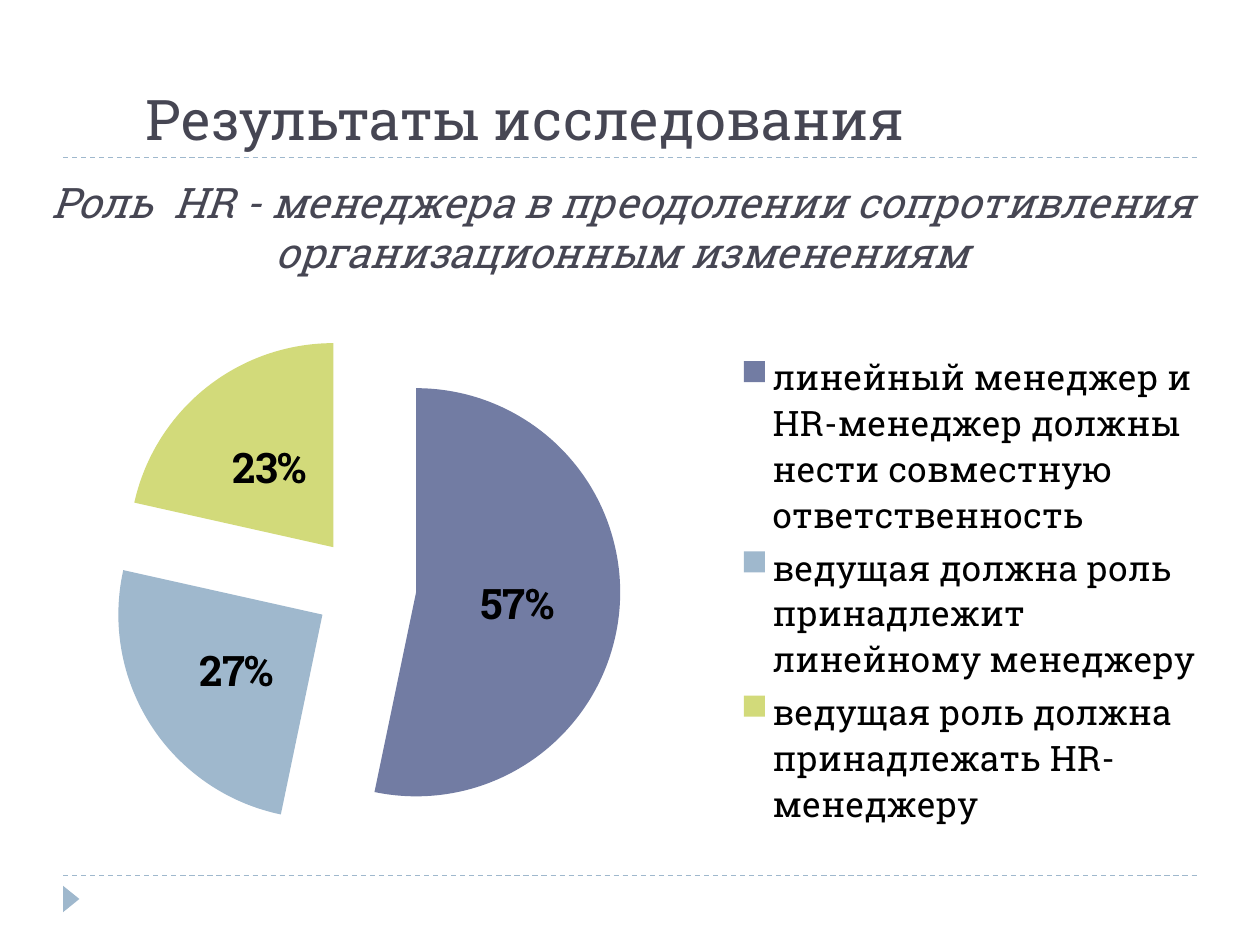
from lxml import etree
from pptx import Presentation
from pptx import util as u
from pptx.chart.data import CategoryChartData
from pptx.dml.color import RGBColor
from pptx.enum import chart as charts, dml, shapes, text
from pptx.oxml import parse_xml
from pptx.oxml.ns import nsdecls, qn

FONT = "Roboto Slab"
DARK, BLUE = "464653", "9FB8CD"
CHART_WIDTH, CHART_HEIGHT = 9.65, 4.33


def style(font, size, color, bold=False, italic=False):
    font.name, font.size = FONT, u.Pt(size)
    font.bold, font.italic = bold, italic
    font.color.rgb = RGBColor.from_string(color)


def manual_layout(x, y, width, height, inner=False):
    """Chart layout element from inches measured inside the chart."""
    target = '<c:layoutTarget val="inner"/>' if inner else ""
    return parse_xml(
        f'<c:layout {nsdecls("c")}><c:manualLayout>{target}'
        '<c:xMode val="edge"/><c:yMode val="edge"/>'
        f'<c:x val="{x / CHART_WIDTH}"/><c:y val="{y / CHART_HEIGHT}"/>'
        f'<c:w val="{width / CHART_WIDTH}"/><c:h val="{height / CHART_HEIGHT}"/>'
        "</c:manualLayout></c:layout>")


presentation = Presentation()
presentation.slide_width, presentation.slide_height = u.Inches(10), u.Inches(7.5)
slide = presentation.slides.add_slide(presentation.slide_layouts[5])

# Dashed rules and corner marker
for y in (6.95, 1.25):
    rule = slide.shapes.add_connector(
        shapes.MSO_CONNECTOR.STRAIGHT,
        u.Inches(0.5), u.Inches(y), u.Inches(9.5), u.Inches(y))
    rule.line.color.rgb = RGBColor.from_string(BLUE)
    rule.line.width = u.Pt(0.75)
    rule.line.dash_style = dml.MSO_LINE.DASH
    etree.SubElement(rule._element.spPr, qn("a:effectLst"))

marker = slide.shapes.add_shape(
    shapes.MSO_SHAPE.ISOSCELES_TRIANGLE,
    u.Inches(0.46), u.Inches(7.07), u.Inches(0.21), u.Inches(0.13))
marker.rotation = 90
marker.shadow.inherit = False
marker.fill.solid()
marker.fill.fore_color.rgb = RGBColor.from_string(BLUE)
marker.line.fill.background()

# Heading and title
title = slide.shapes.title
title.left, title.top = u.Inches(0), u.Inches(1.39)
title.width, title.height = u.Inches(9.88), u.Inches(0.86)
heading = slide.shapes.add_textbox(
    u.Inches(1.06), u.Inches(0.17), u.Inches(8.44), u.Inches(1.08))
for shape, words, size, align, italic in (
    (title, "Роль  HR - менеджера в преодолении сопротивления организационным изменениям",
     24, text.PP_ALIGN.CENTER, True),
    (heading, "Результаты исследования", 32, text.PP_ALIGN.LEFT, False),
):
    frame = shape.text_frame
    frame.text = words
    frame.word_wrap = True
    frame.auto_size = text.MSO_AUTO_SIZE.NONE
    frame.vertical_anchor = text.MSO_ANCHOR.BOTTOM
    paragraph = frame.paragraphs[0]
    paragraph.alignment = align
    style(paragraph.font, size, DARK, italic=italic)

# Exploded pie
answers = (
    ("линейный менеджер и HR-менеджер должны нести совместную ответственность", 0.57, "727CA3"),
    ("ведущая должна роль принадлежит линейному менеджеру", 0.27, BLUE),
    ("ведущая роль должна принадлежать HR-менеджеру", 0.23, "D2DA7A"),
)
data = CategoryChartData(number_format="0%")
data.categories = [answer for answer, _, _ in answers]
data.add_series("Series 1", [share for _, share, _ in answers])
chart = slide.shapes.add_chart(
    charts.XL_CHART_TYPE.PIE, u.Inches(0), u.Inches(2.49),
    u.Inches(CHART_WIDTH), u.Inches(CHART_HEIGHT), data).chart
chart.has_title = False
style(chart.font, 18, "000000")

plot = chart.plots[0]
plot.vary_by_categories = True
for index, (_, _, color) in enumerate(answers):
    point = plot.series[0].points[index]
    point.format.fill.solid()
    point.format.fill.fore_color.rgb = RGBColor.from_string(color)
    point.format.line.fill.background()
for properties in plot.series[0]._element.findall(f"{qn('c:dPt')}/{qn('c:spPr')}"):
    properties.addprevious(parse_xml(f'<c:explosion {nsdecls("c")} val="25"/>'))

plot.has_data_labels = True
labels = plot.data_labels
labels.show_value, labels.show_percentage = True, False
labels.number_format, labels.number_format_is_linked = "0%", False
labels.position = charts.XL_LABEL_POSITION.CENTER
style(labels.font, 24, "000000", bold=True)

chart.has_legend = True
legend = chart.legend
legend.position = charts.XL_LEGEND_POSITION.RIGHT
legend.include_in_layout = False
style(legend.font, 20, "000000")

plot_area = chart._chartSpace.chart.plotArea
for parent, layout in (
    (plot_area, manual_layout(1.28, 0.55, 3.24, 3.24, inner=True)),
    (legend._element, manual_layout(5.86, 0.27, 3.67, 3.85)),
):
    for existing in parent.findall(qn("c:layout")):
        parent.remove(existing)
    parent.insert(0 if parent is plot_area else 1, layout)

presentation.save("out.pptx")
